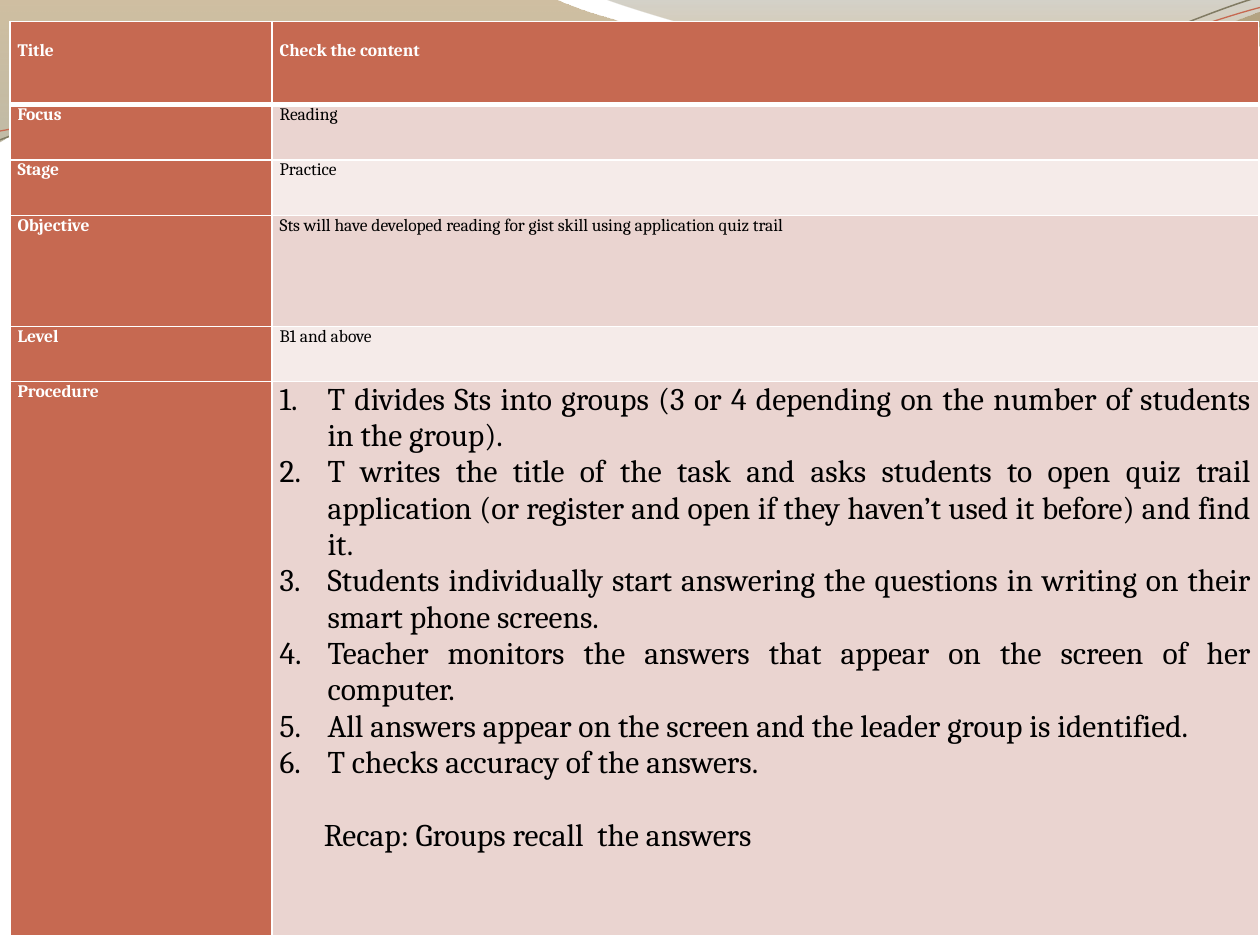
from math import cos, radians, sin

from lxml.etree import SubElement
from pptx import Presentation
from pptx.dml.color import RGBColor
from pptx.enum.text import PP_ALIGN
from pptx.oxml import parse_xml
from pptx.oxml.ns import nsdecls, qn
from pptx.util import Inches, Pt

COLORS = {
    "accent": "C66951", "band": "EAD4D0", "light": "F5EBE9",
    "white": "FFFFFF", "black": "000000", "olive_line": "817B63",
    "brown": "967231", "khaki": "8D835D", "moss": "70694F", "gold": "BD8B30",
}
FONT = "Cambria"
TILT = 357.3
COLUMN_WIDTHS = [2.08, 7.83]
LESSON_ROWS = [
    ("Title", "Check the content", 0.66),
    ("Focus", "Reading", 0.44),
    ("Stage", "Practice", 0.44),
    ("Objective", "Sts will have developed reading for gist skill using application quiz trail", 0.88),
    ("Level", "B1 and above", 0.44),
    ("Procedure", None, 4.4),
]
STEPS = [
    "T divides Sts into groups (3 or 4 depending on the number of students in the group).",
    "T writes the title of the task and asks students to open quiz trail application "
    "(or register and open if they haven’t used it before) and find it.",
    "Students individually start answering the questions in writing on their smart phone screens.",
    "Teacher monitors the answers that appear on the screen of her computer.",
    "All answers appear on the screen and the leader group is identified.",
    "T checks accuracy of the answers.",
]
RECAP = "Recap: Groups recall  the answers"
BROAD_WAVE = [(0, 0), (4.4, -0.01), (4.76, 0.17, 6.64, 0.63, 7.58, 0.63),
              (8.53, 0.63, 9.58, 0.26, 10, 0.09), (10.01, 0.36),
              (9.83, 0.44, 8.7, 0.76, 7.46, 0.75), (6.22, 0.75, 3.82, 0.28, 2.57, 0.34),
              (1.29, 0.36, 0.46, 0.83, -0.01, 1.13)]
RIGHT_WAVE = [(4.79, -0.01), (5.09, 0.11, 6.82, 0.62, 7.69, 0.65),
              (8.56, 0.69, 9.61, 0.32, 10, 0.21), (10, 0)]
OLIVE_CURVE = [(0, 1.11), (0.48, 0.93, 1.58, 0.57, 2.77, 0.52),
               (3.95, 0.47, 5.93, 0.89, 7.13, 0.8), (8.33, 0.71, 9.38, 0.15, 9.98, -0.02)]
RED_CURVE = [(0, 1.04), (0.47, 0.96, 1.64, 0.61, 2.83, 0.56),
             (4.03, 0.51, 5.97, 0.84, 7.17, 0.75), (8.36, 0.67, 9.41, 0.21, 10, 0.06)]


def color(name):
    """Return the named palette colour."""
    return RGBColor.from_string(COLORS[name])


def segment_points(segment):
    """Split a flat segment into its x, y pairs."""
    return list(zip(segment[::2], segment[1::2]))


def turn_segment(segment, center, angle):
    """Turn a segment clockwise around a center."""
    turned = []
    for x, y in segment_points(segment):
        dx, dy = x - center[0], y - center[1]
        turned += [center[0] + dx * cos(angle) - dy * sin(angle),
                   center[1] + dx * sin(angle) + dy * cos(angle)]
    return tuple(turned)


def add_outline(slide, outline, close):
    """Draw an outline of lines and cubic curves given in inches."""
    start, *rest = [(Inches(x), Inches(y)) for segment in outline
                    for x, y in segment_points(segment)]
    builder = slide.shapes.build_freeform(*start)
    builder.add_line_segments(rest, close=close)
    shape = builder.convert_to_shape()
    shape.shadow.inherit = False
    lines = iter(list(shape._element.iter(qn("a:lnTo"))))
    for segment in outline[1:]:
        first = next(lines)
        if len(segment) == 6:
            bezier = parse_xml(f'<a:cubicBezTo {nsdecls("a")}/>')
            first.addprevious(bezier)
            for line in (first, next(lines), next(lines)):
                bezier.append(line[0])
                line.getparent().remove(line)
    return shape


def add_wave(slide, outline, stops):
    """Add a wave with a translucent vertical gradient."""
    wave = add_outline(slide, outline, True)
    wave.line.fill.background()
    stop_xml = "".join(
        f'<a:gs pos="{position * 1000}"><a:srgbClr val="{COLORS[name]}">'
        f'<a:alpha val="{opacity * 1000}"/></a:srgbClr></a:gs>'
        for position, name, opacity in stops)
    gradient = parse_xml(f'<a:gradFill {nsdecls("a")}><a:gsLst>{stop_xml}</a:gsLst>'
                         '<a:lin ang="5400000" scaled="0"/></a:gradFill>')
    wave._element.spPr.find(qn("a:custGeom")).addnext(gradient)


def add_curve(slide, outline, center, name, width):
    """Add an open curved line that is tilted around its center."""
    level = [turn_segment(segment, center, radians(360 - TILT)) for segment in outline]
    curve = add_outline(slide, level, False)
    curve.rotation = TILT
    curve.fill.background()
    curve.line.color.rgb = color(name)
    curve.line.width = Pt(width)


def write_text(paragraph, text, *, size=10, name="black", bold=False, before=0,
               margin=0, numbered=False):
    """Write one justified paragraph with its format."""
    paragraph.alignment = PP_ALIGN.JUSTIFY
    paragraph.space_before = Pt(before)
    run = paragraph.add_run()
    run.text = text
    run.font.name, run.font.size, run.font.bold = FONT, Pt(size), bold
    run.font.color.rgb = color(name)
    properties = paragraph._p.get_or_add_pPr()
    properties.set("marL", str(Inches(margin)))
    if numbered:
        properties.set("indent", str(-Inches(margin)))
        SubElement(properties, qn("a:buFont"), typeface="+mj-lt")
        SubElement(properties, qn("a:buAutoNum"), type="arabicPeriod")


def format_cell(cell, fill, top=0, rule_below=1):
    """Set the margins, white borders and fill of a cell."""
    cell.margin_left = cell.margin_right = Inches(0.06)
    cell.margin_top, cell.margin_bottom = Inches(top), 0
    properties = cell._tc.get_or_add_tcPr()
    for side, width in (("L", 1), ("R", 1), ("T", 1), ("B", rule_below)):
        properties.append(parse_xml(
            f'<a:ln{side} {nsdecls("a")} w="{Pt(width)}"><a:solidFill>'
            f'<a:srgbClr val="{COLORS["white"]}"/></a:solidFill></a:ln{side}>'))
    cell.fill.solid()
    cell.fill.fore_color.rgb = color(fill)


def write_procedure(frame):
    """Write the numbered steps and the recap."""
    for index, step in enumerate(STEPS):
        paragraph = frame.add_paragraph() if index else frame.paragraphs[0]
        write_text(paragraph, step, size=18, margin=0.38, numbered=True)
    write_text(frame.add_paragraph(), RECAP, size=18, before=21, margin=0.35)


def add_lesson_table(slide):
    """Add the lesson plan table."""
    height = sum(row[2] for row in LESSON_ROWS)
    table = slide.shapes.add_table(
        len(LESSON_ROWS), 2, Inches(0.08), Inches(0.17),
        Inches(sum(COLUMN_WIDTHS)), Inches(height)).table
    for column, width in zip(table.columns, COLUMN_WIDTHS):
        column.width = Inches(width)
    for index, (label, content, row_height) in enumerate(LESSON_ROWS):
        table.rows[index].height = Inches(row_height)
        heading = index == 0
        layout = {"top": 0.15, "rule_below": 3} if heading else {}
        label_cell, content_cell = table.cell(index, 0), table.cell(index, 1)
        band = "accent" if heading else "band" if index % 2 else "light"
        format_cell(label_cell, "accent", **layout)
        format_cell(content_cell, band, **layout)
        write_text(label_cell.text_frame.paragraphs[0], label, name="white", bold=True)
        if content is None:
            write_procedure(content_cell.text_frame)
        else:
            write_text(content_cell.text_frame.paragraphs[0], content,
                       name="white" if heading else "black", bold=heading)


def main():
    """Build and save the lesson plan slide."""
    presentation = Presentation()
    presentation.slide_width, presentation.slide_height = Inches(10), Inches(7.5)
    slide = presentation.slides.add_slide(presentation.slide_layouts[6])
    add_wave(slide, BROAD_WAVE, [(0, "brown", 45), (100, "khaki", 55)])
    add_wave(slide, RIGHT_WAVE, [(0, "moss", 30), (80, "gold", 45)])
    add_curve(slide, OLIVE_CURVE, (4.99, 0.58), "olive_line", 0.85)
    add_curve(slide, RED_CURVE, (5, 0.59), "accent", 0.75)
    add_lesson_table(slide)
    presentation.save("out.pptx")


if __name__ == "__main__":
    main()
